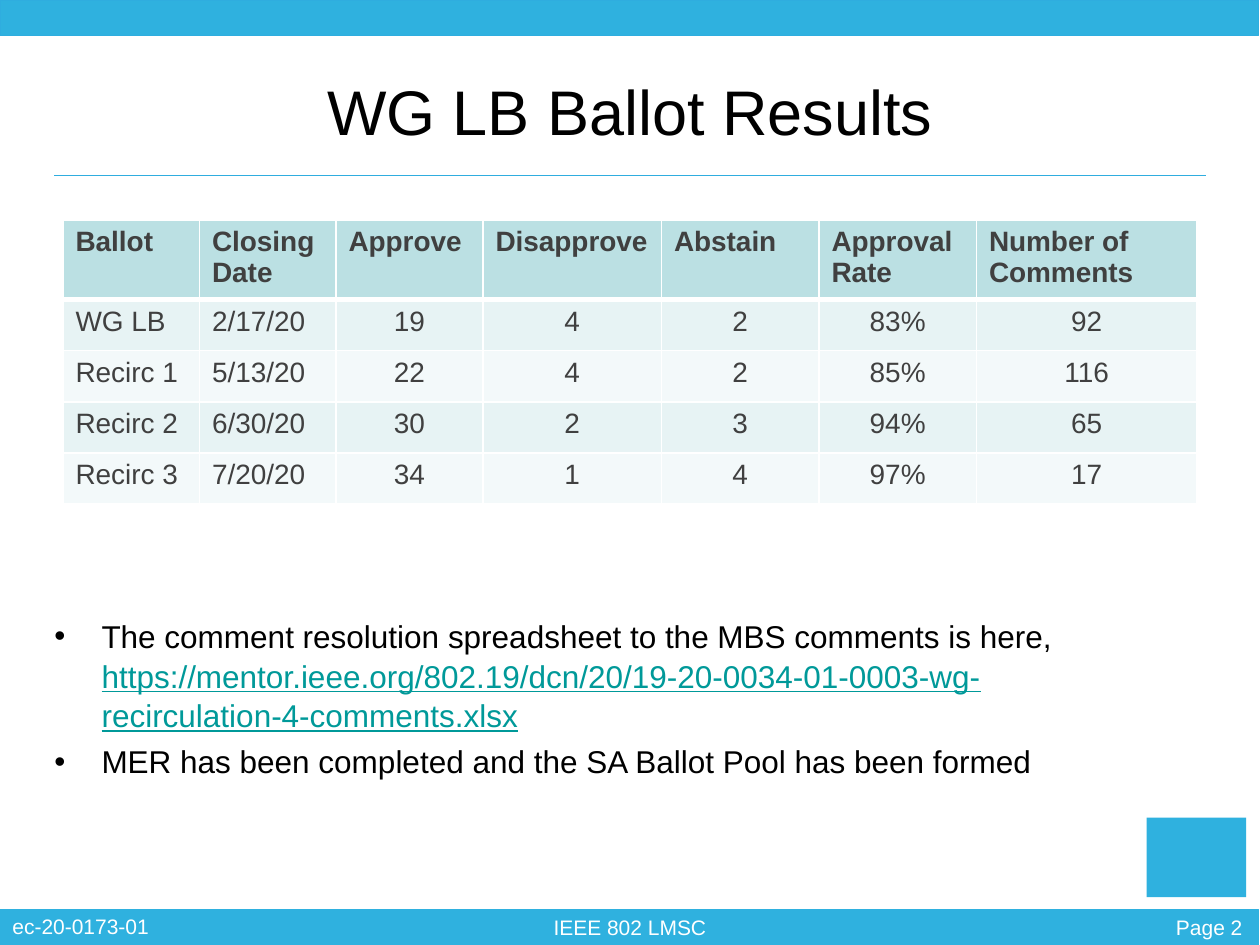
"""Build the WG letter ballot results slide."""
from dataclasses import dataclass

from lxml import etree
from pptx import Presentation
from pptx.dml.color import RGBColor
from pptx.enum import shapes, text
from pptx.oxml import ns
from pptx.util import Pt


@dataclass(frozen=True)
class Theme:
    font: str = "Arial"
    band: str = "2FB1DF"
    rule: str = "2FADDF"
    white: str = "FFFFFF"
    ink: str = "000000"
    cell_ink: str = "404040"
    link: str = "009999"
    header_fill: str = "BBE0E3"
    row_fills: tuple = ("E7F3F4", "F3F9FA")
    title_size: int = 36
    body_size: int = 18
    table_size: int = 16
    footer_size: int = 12


THEME = Theme()
ALIGN = text.PP_ALIGN

TITLE = "WG LB Ballot Results"
BALLOTS = [
    ("Ballot", "Closing Date", "Approve", "Disapprove", "Abstain", "Approval Rate", "Number of Comments"),
    ("WG LB", "2/17/20", "19", "4", "2", "83%", "92"),
    ("Recirc 1", "5/13/20", "22", "4", "2", "85%", "116"),
    ("Recirc 2", "6/30/20", "30", "2", "3", "94%", "65"),
    ("Recirc 3", "7/20/20", "34", "1", "4", "97%", "17"),
]
COLUMN_WIDTHS = (78, 78, 84, 102, 90, 90, 126)
HEADER_HEIGHT, ROW_HEIGHT = 42.6, 29.2
BULLETS = [
    [
        ("The comment resolution spreadsheet to the MBS comments is here, ", False),
        ("https://mentor.ieee.org/802.19/dcn/20/19-20-0034-01-0003-wg-recirculation-4-comments.xlsx", True),
    ],
    [("MER has been completed and the SA Ballot Pool has been formed", False)],
]
FOOTERS = [
    ("Page 2", (626.4, 519.1, 90.7, 21.6), ALIGN.RIGHT),
    ("ec-20-0173-01", (0, 518.4, 156, 21.6), ALIGN.LEFT),
    ("IEEE 802 LMSC", (144, 519.1, 432, 21.6), ALIGN.CENTER),
]
BANDS = [
    ((0, 519.8, 719.3, 20.2), THEME.band),
    ((0, 0, 719.3, 20.2), THEME.rule),
]
LOGO_BLOCK = (655.2, 467.3, 56.9, 45.4)


def points(values):
    return [Pt(value) for value in values]


def rgb(value):
    return RGBColor.from_string(value)


def style(para, size, color, bold=False):
    para.font.name = THEME.font
    para.font.size = Pt(size)
    para.font.bold = bold
    para.font.color.rgb = rgb(color)


def place(shape, frame):
    shape.left, shape.top, shape.width, shape.height = points(frame)


def add_block(page, frame, line_color=None):
    block = page.shapes.add_shape(shapes.MSO_SHAPE.RECTANGLE, *points(frame))
    block.shadow.inherit = False
    block.fill.solid()
    block.fill.fore_color.rgb = rgb(THEME.band)
    if line_color:
        block.line.color.rgb = rgb(line_color)
        block.line.width = Pt(0.75)
    else:
        block.line.fill.background()


def add_rule(page):
    ends = points((31, 100.1, 689, 100.1))
    rule = page.shapes.add_connector(shapes.MSO_CONNECTOR.STRAIGHT, *ends)
    rule.line.color.rgb = rgb(THEME.rule)
    rule.line.width = Pt(0.75)
    etree.SubElement(rule._element.spPr, ns.qn("a:effectLst"))


def add_footer(page, words, frame, align):
    box = page.shapes.add_textbox(*points(frame))
    box.text_frame.word_wrap = True
    para = box.text_frame.paragraphs[0]
    para.text = words
    para.alignment = align
    style(para, THEME.footer_size, THEME.white)


def fill_title(title):
    place(title, (36, 31.7, 648, 62.6))
    title.text_frame.text = TITLE
    title.text_frame.auto_size = text.MSO_AUTO_SIZE.NONE
    title.text_frame.vertical_anchor = text.MSO_ANCHOR.MIDDLE
    para = title.text_frame.paragraphs[0]
    para.alignment = ALIGN.CENTER
    style(para, THEME.title_size, THEME.ink)


def add_bullet(para):
    properties = para._p.get_or_add_pPr()
    properties.set("marL", str(Pt(27)))
    properties.set("indent", str(-Pt(27)))
    etree.SubElement(properties, ns.qn("a:buFont"), typeface=THEME.font)
    etree.SubElement(properties, ns.qn("a:buChar"), char="•")


def fill_body(body):
    place(body, (23.8, 347.8, 648, 126))
    frame = body.text_frame
    frame.auto_size = text.MSO_AUTO_SIZE.NONE
    frame.vertical_anchor = text.MSO_ANCHOR.TOP
    for index, spans in enumerate(BULLETS):
        para = frame.add_paragraph() if index else frame.paragraphs[0]
        add_bullet(para)
        style(para, THEME.body_size, THEME.ink)
        para.line_spacing = 1.05
        para.space_before = Pt(3.6 if index else 0)
        for words, is_link in spans:
            span = para.add_run()
            span.text = words
            if is_link:
                span.font.color.rgb = rgb(THEME.link)
                span.font.underline = True


def add_borders(cell, row):
    widths = {"L": 1, "R": 1, "T": 3 if row == 1 else 1, "B": 3 if row == 0 else 1}
    properties = cell._tc.get_or_add_tcPr()
    for side, width in widths.items():
        line = etree.SubElement(properties, ns.qn(f"a:ln{side}"), w=str(Pt(width)))
        fill = etree.SubElement(line, ns.qn("a:solidFill"))
        etree.SubElement(fill, ns.qn("a:srgbClr"), val=THEME.white)


def add_ballot_table(page):
    heights = [HEADER_HEIGHT] + [ROW_HEIGHT] * (len(BALLOTS) - 1)
    frame = points((36, 125.6, sum(COLUMN_WIDTHS), sum(heights)))
    table = page.shapes.add_table(len(BALLOTS), len(COLUMN_WIDTHS), *frame).table
    for column, width in zip(table.columns, COLUMN_WIDTHS):
        column.width = Pt(width)
    for row, (values, height) in enumerate(zip(BALLOTS, heights)):
        table.rows[row].height = Pt(height)
        for column, value in enumerate(values):
            cell = table.cell(row, column)
            add_borders(cell, row)
            cell.fill.solid()
            cell.fill.fore_color.rgb = rgb(THEME.row_fills[(row - 1) % 2] if row else THEME.header_fill)
            cell.text = value
            para = cell.text_frame.paragraphs[0]
            para.alignment = ALIGN.CENTER if row and column > 1 else ALIGN.LEFT
            style(para, THEME.table_size, THEME.cell_ink, bold=row == 0)


def main():
    deck = Presentation()
    deck.slide_width, deck.slide_height = Pt(720), Pt(540)
    page = deck.slides.add_slide(deck.slide_layouts[1])
    for frame, line_color in BANDS:
        add_block(page, frame, line_color)
    add_rule(page)
    for footer in FOOTERS:
        add_footer(page, *footer)
    add_block(page, LOGO_BLOCK)
    fill_title(page.shapes.title)
    add_ballot_table(page)
    fill_body(page.placeholders[1])
    deck.save("out.pptx")


if __name__ == "__main__":
    main()
